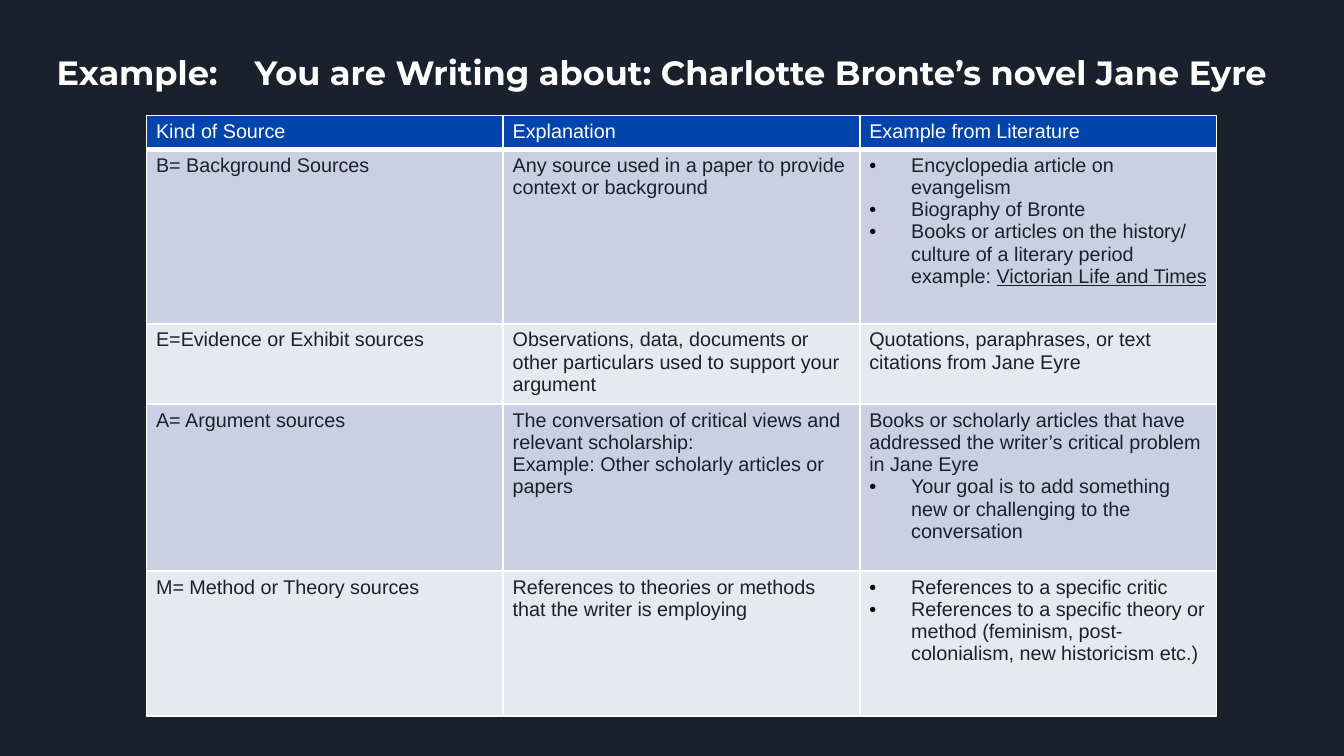
from lxml.etree import SubElement
from pptx import Presentation
from pptx.dml.color import RGBColor
from pptx.enum.text import PP_ALIGN
from pptx.oxml import parse_xml
from pptx.oxml.ns import nsdecls, qn
from pptx.util import Cm, Pt

NAVY = RGBColor(0x1B, 0x21, 0x2C)
BLUE = RGBColor(0x01, 0x45, 0xAC)
LILAC = RGBColor(0xCC, 0xCF, 0xE3)
PALE = RGBColor(0xE7, 0xE9, 0xF1)
WHITE = RGBColor(0xFF, 0xFF, 0xFF)
BLACK = RGBColor(0x00, 0x00, 0x00)

BULLET = "• "
UNDERLINE = "_"
ROW_HEIGHTS = [0.64, 3.3, 1.52, 3.15, 2.74]

# Each cell is a list of paragraphs; each paragraph is a list of runs.
# A paragraph starting with BULLET is a list item, a run starting with UNDERLINE is underlined.
SOURCES = [
    [[["Kind of Source"]], [["Explanation"]], [["Example from Literature"]]],
    [
        [["B= Background Sources"]],
        [["Any source used in a paper to provide context or background"]],
        [
            [BULLET, "Encyclopedia article on evangelism"],
            [BULLET, "Biography of Bronte"],
            [BULLET, "Books or articles on the history/ culture of a literary period example: ",
             UNDERLINE + "Victorian Life and Times"],
        ],
    ],
    [
        [["E=Evidence or Exhibit sources"]],
        [["Observations, data, documents or other particulars used to support your argument"]],
        [["Quotations, paraphrases, or text citations from Jane Eyre"]],
    ],
    [
        [["A= Argument sources"]],
        [["The conversation of critical views and relevant scholarship:"],
         ["Example: Other scholarly articles or papers"]],
        [
            ["Books or scholarly articles that have addressed the writer’s critical problem in Jane Eyre"],
            [BULLET, "Your goal is to add something new or challenging to the conversation"],
        ],
    ],
    [
        [["M= Method or Theory sources"]],
        [["References to theories or methods that the writer is employing"]],
        [
            [BULLET, "References to a specific critic"],
            [BULLET, "References to a specific theory or method (feminism, post-colonialism, "
                     "new historicism etc.)"],
        ],
    ],
]


def add_run(paragraph, text, font, size, color, bold=False):
    run = paragraph.add_run()
    run.text = text
    run.font.name = font
    run.font.size = Pt(size)
    run.font.bold = bold
    run.font.color.rgb = color
    return run


def add_heading(slide, text, left, top, width, height, align):
    frame = slide.shapes.add_textbox(left, top, width, height).text_frame
    frame.word_wrap = True
    frame.paragraphs[0].alignment = align
    add_run(frame.paragraphs[0], text, "Montserrat", 18, WHITE, bold=True)


def set_bullet(paragraph):
    properties = paragraph._p.get_or_add_pPr()
    properties.set("marL", str(Cm(0.79)))
    properties.set("indent", str(-Cm(0.79)))
    bullet_color = SubElement(properties, qn("a:buClr"))
    SubElement(bullet_color, qn("a:srgbClr"), val=str(BLACK))
    SubElement(properties, qn("a:buFont"), typeface="Arial")
    SubElement(properties, qn("a:buChar"), char=BULLET.strip())


def set_borders(cell, bottom_width):
    """Draw white lines on all sides; they must precede the fill in the XML."""
    widths = {"lnL": 1, "lnR": 1, "lnT": 1, "lnB": bottom_width}
    for position, (side, width) in enumerate(widths.items()):
        line = parse_xml(
            f'<a:{side} {nsdecls("a")} w="{Pt(width)}"><a:solidFill>'
            f'<a:srgbClr val="{WHITE}"/></a:solidFill></a:{side}>'
        )
        cell._tc.get_or_add_tcPr().insert(position, line)


def fill_cell(cell, paragraphs, background, text_color, bottom_width):
    cell.margin_left = cell.margin_right = Cm(0.18)
    cell.margin_top = cell.margin_bottom = Cm(0.1)
    cell.fill.solid()
    cell.fill.fore_color.rgb = background
    set_borders(cell, bottom_width)
    frame = cell.text_frame
    for index, runs in enumerate(paragraphs):
        paragraph = frame.add_paragraph() if index else frame.paragraphs[0]
        for text in runs:
            if text == BULLET:
                set_bullet(paragraph)
                continue
            run = add_run(paragraph, text.removeprefix(UNDERLINE), "Arial", 10.6, text_color)
            if text.startswith(UNDERLINE):
                run.font.underline = True


def add_source_table(slide, left, top, width):
    height = Cm(sum(ROW_HEIGHTS))
    table = slide.shapes.add_table(len(SOURCES), len(SOURCES[0]), left, top, width, height).table
    for row, row_height in zip(table.rows, ROW_HEIGHTS):
        row.height = Cm(row_height)
    for row_index, source in enumerate(SOURCES):
        if row_index == 0:
            style = BLUE, WHITE, 3
        else:
            style = (LILAC if row_index % 2 else PALE), NAVY, 1
        for column_index, paragraphs in enumerate(source):
            fill_cell(table.cell(row_index, column_index), paragraphs, *style)


def main():
    presentation = Presentation()
    presentation.slide_width = Cm(25.4)
    presentation.slide_height = Cm(14.29)
    slide = presentation.slides.add_slide(presentation.slide_layouts[6])
    slide.background.fill.solid()
    slide.background.fill.fore_color.rgb = NAVY

    add_source_table(slide, Cm(2.77), Cm(2.18), Cm(20.22))
    add_heading(slide, "Example:", Cm(0.82), Cm(0.86), Cm(3.88), Cm(1.02), PP_ALIGN.LEFT)
    add_heading(slide, "You are Writing about: Charlotte Bronte’s novel Jane Eyre",
                Cm(4.08), Cm(0.86), Cm(20.6), Cm(1.02), PP_ALIGN.CENTER)
    presentation.save("out.pptx")


if __name__ == "__main__":
    main()
